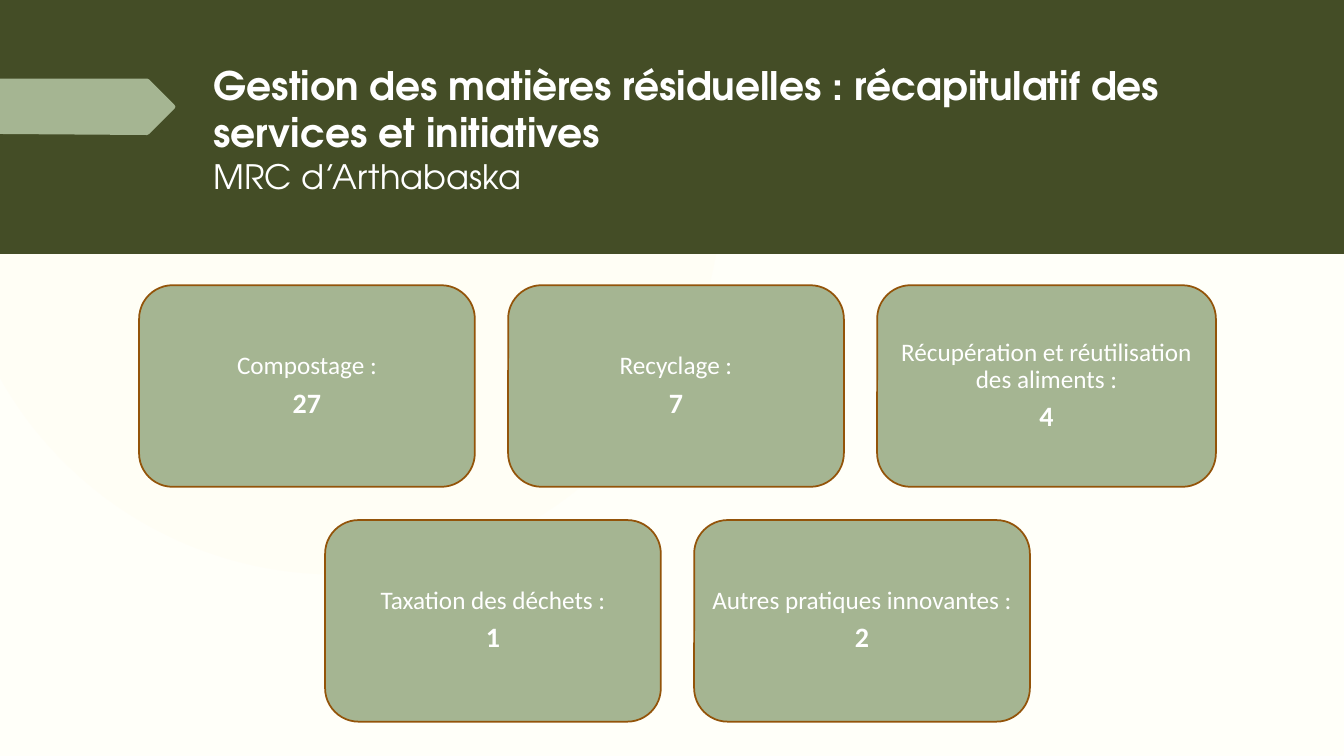
from pptx import Presentation
from pptx.dml.color import RGBColor
from pptx.enum.shapes import MSO_SHAPE
from pptx.enum.text import MSO_ANCHOR, PP_ALIGN
from pptx.oxml import parse_xml
from pptx.oxml.ns import nsdecls, qn
from pptx.util import Inches, Pt

WHITE, OLIVE, SAGE, RUST = "FFFFFF", "444D26", "A5B592", "93540A"
HEAD, BODY = "TeX Gyre Adventor", "Calibri"
GAP = 0.33
ROWS = [
    [("Compostage :", "27", 3.33),
     ("Recyclage :", "7", 3.33),
     ("Récupération et réutilisation des aliments :", "4", 3.36)],
    [("Taxation des déchets :", "1", 3.33),
     ("Autres pratiques innovantes :", "2", 3.33)],
]


def color(code):
    return RGBColor.from_string(code)


def paint(shape, fill, line=None):
    shape.shadow.inherit = False
    shape.fill.solid()
    shape.fill.fore_color.rgb = color(fill)
    if line:
        shape.line.color.rgb = color(line)
        shape.line.width = Pt(1.25)
    else:
        shape.line.fill.background()


def add_run(para, text, size, font, bold=False):
    run = para.add_run()
    run.text = text
    run.font.size = Pt(size)
    run.font.name = font
    run.font.bold = bold
    run.font.color.rgb = color(WHITE)


def backdrop(slide):
    fill = slide.background.fill
    fill.gradient()
    for stop, code, spot in zip(fill.gradient_stops, ("FFFEF5", "FFFFF9"), (0, 1)):
        stop.color.rgb = color(code)
        stop.position = spot
    # Radial instead of linear shading
    grad = next(slide.background._cSld.iter(qn("a:gradFill")))
    grad.replace(grad.find(qn("a:lin")), parse_xml(
        f'<a:path {nsdecls("a")} path="circle">'
        '<a:fillToRect l="50000" t="50000" r="100000" b="100000"/></a:path>'))


def header(slide, left, top, width, height):
    # Band
    band = slide.shapes.add_shape(MSO_SHAPE.RECTANGLE, Inches(left), Inches(top),
                                  Inches(width), Inches(height))
    paint(band, OLIVE)

    # Title
    box = slide.shapes.add_textbox(Inches(left + 2.02), Inches(top + 0.56),
                                   Inches(10.26), Inches(1.59))
    box.text_frame.word_wrap = True
    para = box.text_frame.paragraphs[0]
    add_run(para, "Gestion des matières résiduelles : récapitulatif des "
                  "services et initiatives", 28, HEAD, True)
    para.add_line_break()
    add_run(para, "MRC d’Arthabaska", 24, HEAD)

    # Pointer at the left edge
    edge = [(0, 0), (1.46, 0), (1.48, 0.01), (1.73, 0.26), (1.74, 0.28),
            (1.73, 0.3), (1.48, 0.55), (1.46, 0.56), (0, 0.55)]
    dots = [(Inches(left + x), Inches(top + 0.78 + y)) for x, y in edge]
    form = slide.shapes.build_freeform(*dots[0])
    form.add_line_segments(dots[1:], close=True)
    paint(form.convert_to_shape(), SAGE)


def card(slide, label, count, left, top, width, height):
    shape = slide.shapes.add_shape(MSO_SHAPE.ROUNDED_RECTANGLE, Inches(left),
                                   Inches(top), Inches(width), Inches(height))
    paint(shape, SAGE, RUST)
    frame = shape.text_frame
    frame.word_wrap = True
    frame.vertical_anchor = MSO_ANCHOR.MIDDLE
    frame.margin_left = frame.margin_right = Inches(0.07)
    frame.margin_top = frame.margin_bottom = Inches(0.07)
    first, last = frame.paragraphs[0], frame.add_paragraph()
    for para in (first, last):
        para.alignment = PP_ALIGN.CENTER
        para.line_spacing = 0.9
        para.space_after = Pt(6.3)
    add_run(first, label, 18, BODY)
    add_run(last, count, 20, BODY, True)


def cards(slide, left, top, width, height):
    tall = (height - GAP * (len(ROWS) - 1)) / len(ROWS)
    for i, row in enumerate(ROWS):
        # Each row is centred in the box
        span = sum(wide for _, _, wide in row) + GAP * (len(row) - 1)
        x = left + (width - span) / 2
        for label, count, wide in row:
            card(slide, label, count, x, top + i * (tall + GAP), wide, tall)
            x += wide + GAP


def main():
    prs = Presentation()
    prs.slide_width, prs.slide_height = Inches(13.33), Inches(7.5)
    slide = prs.slides.add_slide(prs.slide_layouts[6])
    backdrop(slide)
    header(slide, 0, 0, 13.33, 2.52)
    cards(slide, 1.38, 2.83, 10.68, 4.33)
    prs.save("out.pptx")


if __name__ == "__main__":
    main()
